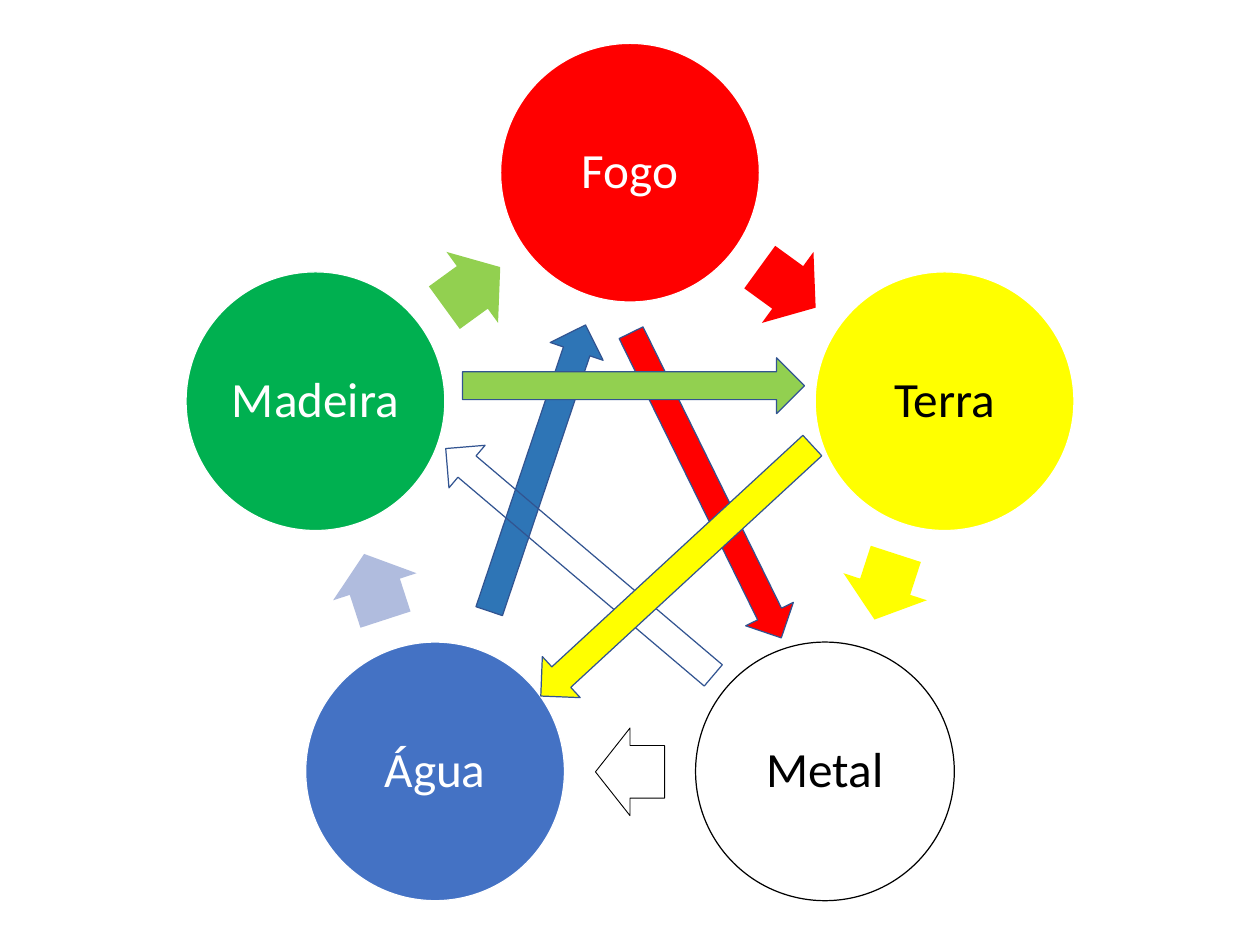
import math
from collections import namedtuple

from pptx import Presentation
from pptx import util as u
from pptx.dml.color import RGBColor
from pptx.enum import shapes, text

PX = 9144
Box = namedtuple("Box", "left top width height")

COLORS = {
    "red": "FF0000",
    "yellow": "FFFF00",
    "white": "FFFFFF",
    "black": "000000",
    "blue": "4472C4",
    "pale_blue": "B0BCDE",
    "deep_blue": "2E75B6",
    "green": "00B050",
    "light_green": "92D050",
    "outline": "325491",
}

ELEMENTS = [
    ("Fogo", "red", "white", "white", "red", None),
    ("Terra", "yellow", "white", "black", "yellow", None),
    ("Metal", "white", "black", "black", "white", "black"),
    ("Água", "blue", "white", "white", "pale_blue", None),
    ("Madeira", "green", "white", "white", "light_green", None),
]

CONTROLS = [
    (Box(226, 448, 341, 63), 288.6, "deep_blue"),
    (Box(395, 469, 384, 60), 63.8, "red"),
    (Box(246, 554, 396, 63), 220.3, None),
    (Box(312, 355, 386, 63), 0, "light_green"),
    (Box(345, 564, 417, 63), 137.3, "yellow"),
]


def rgb(name):
    return RGBColor.from_string(COLORS[name])


def add_figure(parent, kind, box, fill, line, weight=1):
    figure = parent.add_shape(kind, *(round(length) * PX for length in box))
    figure.shadow.inherit = False
    if fill:
        figure.fill.solid()
        figure.fill.fore_color.rgb = rgb(fill)
    else:
        figure.fill.background()
    if line:
        figure.line.color.rgb = rgb(line)
        figure.line.width = u.Pt(weight)
    else:
        figure.line.fill.background()
    return figure


def centred(x, y, width, height):
    return Box(x - width / 2, y - height / 2, width, height)


def write_element(circle, name, color):
    frame = circle.text_frame
    frame.word_wrap = True
    frame.vertical_anchor = text.MSO_ANCHOR.MIDDLE
    frame.margin_left = frame.margin_right = 6 * PX
    frame.margin_top = frame.margin_bottom = 6 * PX
    label = frame.paragraphs[0]
    label.text = name
    label.alignment = text.PP_ALIGN.CENTER
    label.line_spacing = 0.9
    label.font.name = "Calibri"
    label.font.size = u.Pt(40)
    label.font.color.rgb = rgb(color)


def add_generation_cycle(slide, box):
    cycle = slide.shapes.add_group_shape().shapes
    diameter = 292
    step = 2 * math.pi / len(ELEMENTS)
    radius = (box.height - diameter) / (1 + math.cos(step / 2))
    center_x = box.left + box.width / 2
    center_y = box.top + diameter / 2 + radius
    for index, (name, fill, line, ink, flow, flow_line) in enumerate(ELEMENTS):
        angle = index * step
        x = center_x + radius * math.sin(angle)
        y = center_y - radius * math.cos(angle)
        circle = add_figure(cycle, shapes.MSO_SHAPE.OVAL,
                            centred(x, y, diameter, diameter), fill, line)
        write_element(circle, name, ink)

        halfway = angle + step / 2
        reach = radius * math.cos(step / 2)
        x = center_x + reach * math.sin(halfway)
        y = center_y - reach * math.cos(halfway)
        arrow = add_figure(cycle, shapes.MSO_SHAPE.RIGHT_ARROW,
                           centred(x, y, 78, 99), flow, flow_line, 0.75)
        arrow.adjustments[0] = 0.6
        arrow.adjustments[1] = 0.5
        arrow.rotation = math.degrees(halfway)


def add_control_arrows(slide, box):
    for place, turn, fill in CONTROLS:
        spot = Box(box.left + place.left, box.top + place.top,
                   place.width, place.height)
        arrow = add_figure(slide.shapes, shapes.MSO_SHAPE.RIGHT_ARROW,
                           spot, fill, "outline")
        arrow.rotation = turn


def main():
    deck = Presentation()
    deck.slide_width = 1422 * PX
    deck.slide_height = 1067 * PX
    slide = deck.slides.add_slide(deck.slide_layouts[6])
    diagram = Box(210, 49, 1002, 968)
    add_generation_cycle(slide, diagram)
    add_control_arrows(slide, diagram)
    deck.save("out.pptx")


if __name__ == "__main__":
    main()
